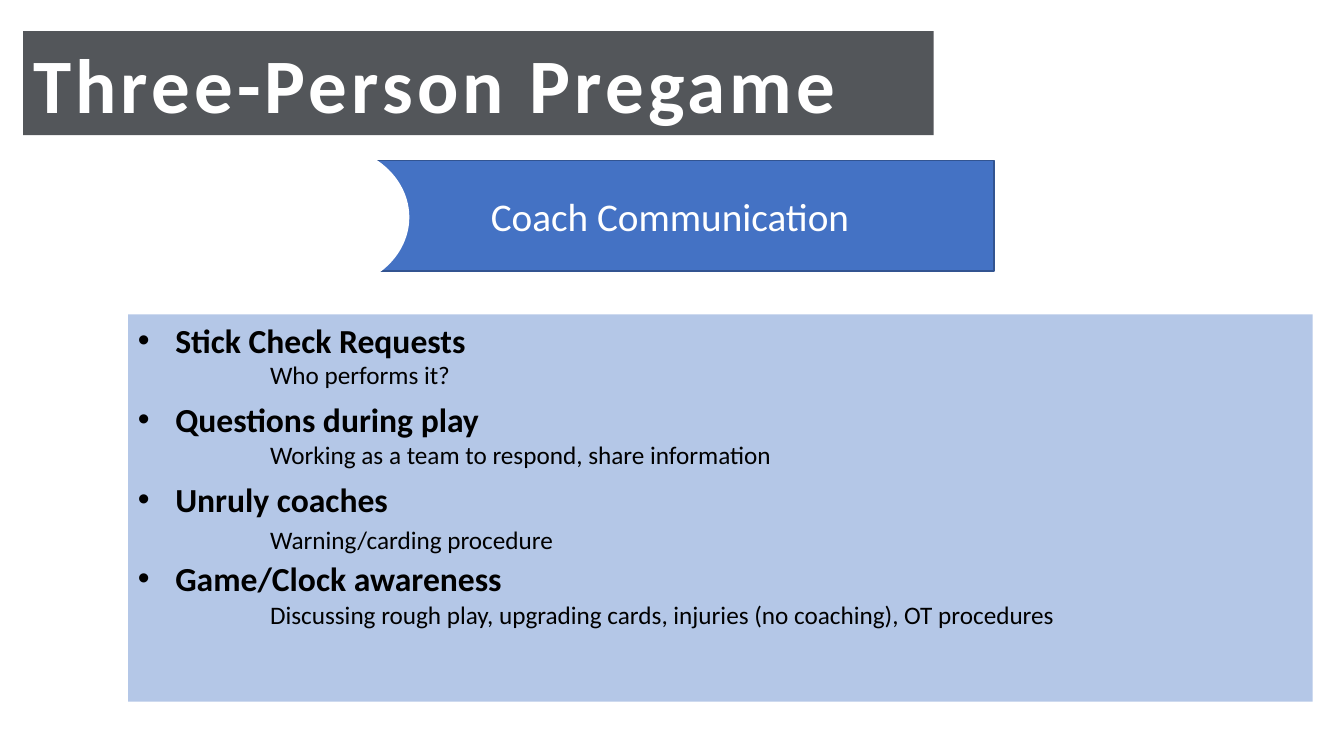
from dataclasses import dataclass

from lxml.etree import SubElement as Sub
from pptx import Presentation as Deck
from pptx.dml.color import RGBColor as RGB
from pptx.enum.shapes import MSO_SHAPE as Kind
from pptx.enum.text import MSO_ANCHOR as Anchor, MSO_AUTO_SIZE as Fit, PP_ALIGN as Align
from pptx.oxml.ns import qn
from pptx.util import Pt

PX = 9144  # EMU per px, 100 px to the inch


@dataclass(frozen=True)
class Theme:
    font: str = "Calibri"
    white: str = "FFFFFF"
    black: str = "000000"
    dark: str = "53565A"
    blue: str = "4472C4"
    edge: str = "325491"
    pale: str = "B4C7E7"
    title: int = 55
    head: int = 28
    topic: int = 24
    note: int = 18
    track: int = 3
    gap: int = 28


THEME = Theme()

TOPICS = [
    ("Stick Check Requests", "Who performs it?", 352),
    ("Questions during play", "Working as a team to respond, share information", 431),
    ("Unruly coaches", "Warning/carding procedure", 515),
    ("Game/Clock awareness",
     "Discussing rough play, upgrading cards, injuries (no coaching), OT procedures", 590),
]


def scale(*box):
    return [n * PX for n in box]


def style(para, size, color, bold=False, align=Align.LEFT):
    para.alignment = align
    for run in para.runs:
        font = run.font
        font.name, font.size, font.bold = THEME.font, Pt(size), bold
        font.color.rgb = RGB.from_string(color)


def paint(shape, color):
    shape.fill.solid()
    shape.fill.fore_color.rgb = RGB.from_string(color)


def add_panel(slide, kind, box, fill, edge=None):
    shape = slide.shapes.add_shape(kind, *scale(*box))
    shape.shadow.inherit = False
    paint(shape, fill)
    if edge:
        shape.line.color.rgb = RGB.from_string(edge)
        shape.line.width = Pt(1)
    else:
        shape.line.fill.background()
    return shape


def add_title(slide, text):
    title = slide.shapes.title
    title.left, title.top, title.width, title.height = scale(23, 31, 903, 103)
    paint(title, THEME.dark)
    frame = title.text_frame
    frame.text = text
    frame.auto_size, frame.vertical_anchor = Fit.NONE, Anchor.TOP
    para = frame.paragraphs[0]
    style(para, THEME.title, THEME.white, bold=True)
    para.runs[0].font._element.set("spc", str(THEME.track * 100))


def add_banner(slide, text):
    """Draw the heading bar, with a white disc biting into its left end."""
    bar = add_panel(slide, Kind.RECTANGLE, (343, 159, 643, 110), THEME.blue, THEME.edge)
    frame = bar.text_frame
    frame.text, frame.vertical_anchor = text, Anchor.MIDDLE
    style(frame.paragraphs[0], THEME.head, THEME.white, align=Align.CENTER)
    add_panel(slide, Kind.OVAL, (241, 144, 165, 143), THEME.white)


def add_bullet(para):
    props = para._p.get_or_add_pPr()
    props.set("marL", str(37 * PX))
    props.set("indent", str(-37 * PX))
    Sub(props, qn("a:buFont")).set("typeface", "Arial")
    Sub(props, qn("a:buChar")).set("char", "•")


def add_topics(slide, names):
    panel = add_panel(slide, Kind.RECTANGLE, (127, 312, 1175, 384), THEME.pale)
    frame = panel.text_frame
    frame.text, frame.vertical_anchor = "\n".join(names), Anchor.TOP
    for i, para in enumerate(frame.paragraphs):
        add_bullet(para)
        style(para, THEME.topic, THEME.black, bold=True)
        if i:
            para.space_before = Pt(THEME.gap)


def add_note(slide, text, top):
    frame = slide.shapes.add_textbox(*scale(258, top, 842, 40)).text_frame
    frame.text, frame.word_wrap = text, True
    style(frame.paragraphs[0], THEME.note, THEME.black)


def main():
    deck = Deck()
    deck.slide_width, deck.slide_height = scale(1333, 750)
    slide = deck.slides.add_slide(deck.slide_layouts.get_by_name("Title Only"))
    add_title(slide, "Three-Person Pregame")
    add_banner(slide, "Coach Communication")
    add_topics(slide, [name for name, _, _ in TOPICS])
    for _, note, top in TOPICS:
        add_note(slide, note, top)
    deck.save("out.pptx")


if __name__ == "__main__":
    main()
